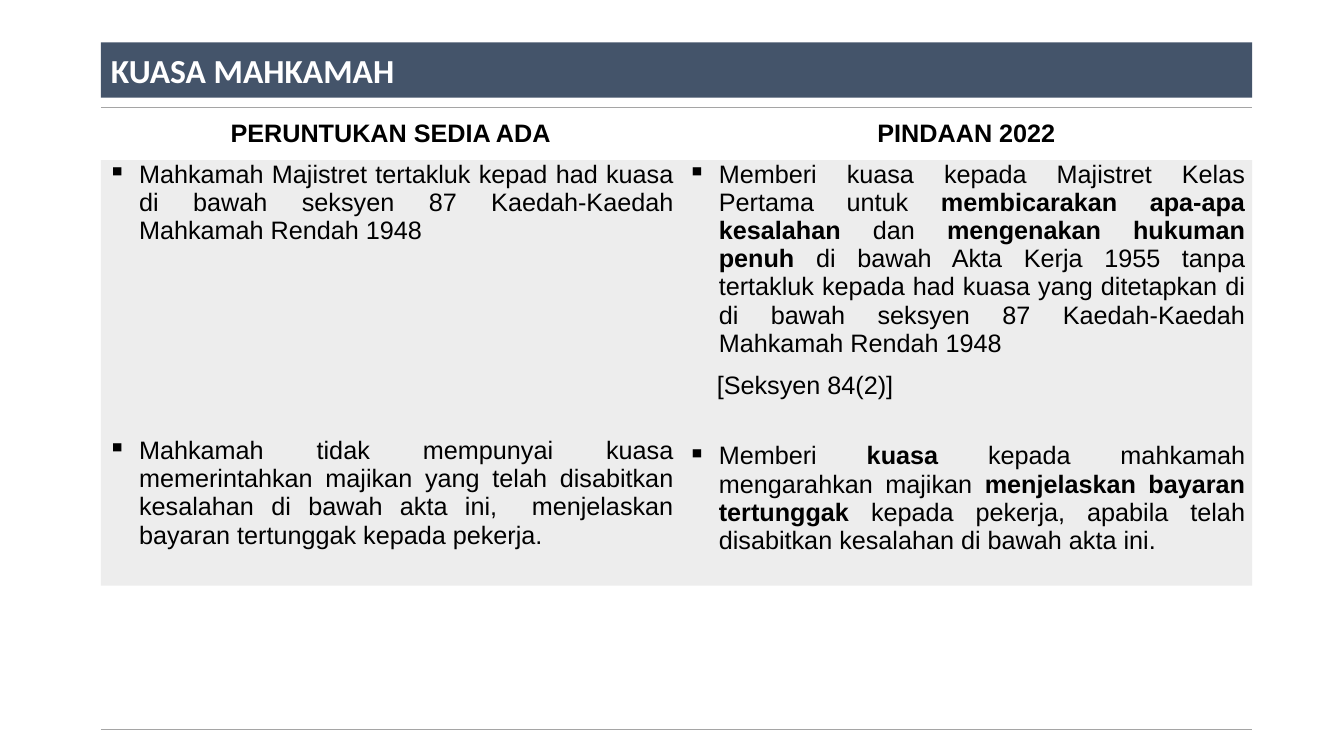
import pptx
import pptx.dml.color
import pptx.enum.text
import pptx.oxml
import pptx.oxml.ns
import pptx.util
from lxml import etree

Inches, Pt = pptx.util.Inches, pptx.util.Pt
ALIGN = pptx.enum.text.PP_ALIGN
MIDDLE = pptx.enum.text.MSO_ANCHOR.MIDDLE
qn = pptx.oxml.ns.qn

COLORS = {"bar": "44546A", "gray": "A5A5A5", "text": "000000", "white": "FFFFFF"}


class SlideBuilder:
    """Holds the style and the current slide."""

    def __init__(self, prs):
        self.slide = prs.slides.add_slide(prs.slide_layouts[5])
        self.font, self.size = "Arial", 18

    def color(self, name):
        return pptx.dml.color.RGBColor.from_string(COLORS[name])

    def style(self, p, align, font, size, color, bold=None):
        p.alignment = align
        p.font.name, p.font.size, p.font.bold = font, Pt(size), bold
        p.font.color.rgb = self.color(color)

    def title(self, text, x, y, w, h):
        sp = self.slide.shapes.title
        sp.left, sp.top, sp.width, sp.height = map(Inches, (x, y, w, h))
        sp.fill.solid()
        sp.fill.fore_color.rgb = self.color("bar")
        tf = sp.text_frame
        tf.text = text
        tf.auto_size = pptx.enum.text.MSO_AUTO_SIZE.NONE
        tf.vertical_anchor = MIDDLE
        self.style(tf.paragraphs[0], ALIGN.LEFT, "Calibri", 24, "white", True)

    def table(self, x, y, widths, heights):
        frame = self.slide.shapes.add_table(
            len(heights), len(widths), Inches(x), Inches(y),
            Inches(sum(widths)), Inches(sum(heights)))
        table = frame.table
        table.first_row = table.horz_banding = False
        for column, width in zip(table.columns, widths):
            column.width = Inches(width)
        for row, height in zip(table.rows, heights):
            row.height = Inches(height)
        last = len(heights) - 1
        for i, row in enumerate(table.rows):
            for cell in row.cells:
                cell.fill.background()
                self.borders(cell, top=i == 0, bottom=i == last)
        return table

    def borders(self, cell, top, bottom):
        tcPr = cell._tc.get_or_add_tcPr()
        sides = (("lnL", False), ("lnR", False), ("lnT", top), ("lnB", bottom))
        for i, (side, drawn) in enumerate(sides):
            ln = etree.Element(qn("a:" + side), w=str(Pt(1)))
            if drawn:
                fill = etree.SubElement(ln, qn("a:solidFill"))
                etree.SubElement(fill, qn("a:srgbClr"), val=COLORS["gray"])
            else:
                etree.SubElement(ln, qn("a:noFill"))
            tcPr.insert(i, ln)

    def margins(self, cell, side):
        cell.margin_left = cell.margin_right = Inches(side)
        cell.margin_top = cell.margin_bottom = 0

    def header(self, cell, text):
        self.margins(cell, 0.08)
        cell.vertical_anchor = MIDDLE
        cell.text = text
        self.style(cell.text_frame.paragraphs[0], ALIGN.CENTER, self.font, self.size, "text", True)

    def body(self, cell, paragraphs):
        self.margins(cell, 0.07)
        cell.fill.solid()
        cell.fill.fore_color.rgb = self.color("gray")
        shade = cell._tc.tcPr.find(qn("a:solidFill"))[0]
        etree.SubElement(shade, qn("a:alpha"), val="20000")
        tf = cell.text_frame
        for i, (parts, options) in enumerate(paragraphs):
            p = tf.paragraphs[0] if i == 0 else tf.add_paragraph()
            self.paragraph(p, parts, **options)

    def paragraph(self, p, parts, bullet=True, before=0, after=0, spacing=None):
        """Every second part is bold."""
        self.style(p, ALIGN.JUSTIFY, self.font, self.size, "text")
        p.space_before, p.space_after, p.line_spacing = Pt(before), Pt(after), spacing
        pPr = p._p.get_or_add_pPr()
        margin, indent = (0.31, -0.31) if bullet else (0, 0.29)
        pPr.set("marL", str(Inches(margin)))
        pPr.set("indent", str(Inches(indent)))
        if bullet:
            mark = etree.Element(qn("a:buChar"), char="▪")
            pPr.insert(list(pPr).index(pPr.find(qn("a:defRPr"))), mark)
        for i, part in enumerate(parts):
            r = p.add_run()
            r.text = part
            r.font.bold = i % 2 == 1


def main():
    prs = pptx.Presentation()
    prs.slide_width, prs.slide_height = Inches(13.33), Inches(7.5)
    s = SlideBuilder(prs)

    # Title bar
    s.title("KUASA MAHKAMAH", 1, 0.42, 11.42, 0.55)

    # Comparison table
    table = s.table(1, 1.07, widths=(5.75, 5.67), heights=(0.52, 4.22, 1.43))
    for i, heading in enumerate(("PERUNTUKAN SEDIA ADA", "PINDAAN 2022")):
        s.header(table.cell(0, i), heading)

    # Existing provisions
    s.body(table.cell(1, 0), [
        (["Mahkamah Majistret tertakluk kepad had kuasa di bawah seksyen 87 "
          "Kaedah-Kaedah Mahkamah Rendah 1948"], {"after": 6}),
        (["Mahkamah tidak mempunyai kuasa memerintahkan majikan yang telah "
          "disabitkan kesalahan di bawah akta ini,  menjelaskan bayaran "
          "tertunggak kepada pekerja."], {"before": 131, "after": 6}),
    ])

    # Amendments
    s.body(table.cell(1, 1), [
        (["Memberi kuasa kepada Majistret Kelas Pertama untuk ",
          "membicarakan apa-apa kesalahan", " dan ", "mengenakan hukuman penuh ",
          "di bawah Akta Kerja 1955 tanpa tertakluk kepada had kuasa yang "
          "ditetapkan di di bawah seksyen 87 Kaedah-Kaedah Mahkamah Rendah 1948"], {}),
        (["[Seksyen 84(2)]"], {"bullet": False, "spacing": 1.5}),
        (["Memberi ", "kuasa ", "kepada mahkamah mengarahkan majikan ",
          "menjelaskan bayaran tertunggak ",
          "kepada pekerja, apabila telah disabitkan kesalahan di bawah akta ini."],
         {"before": 30}),
    ])

    prs.save("out.pptx")


if __name__ == "__main__":
    main()
